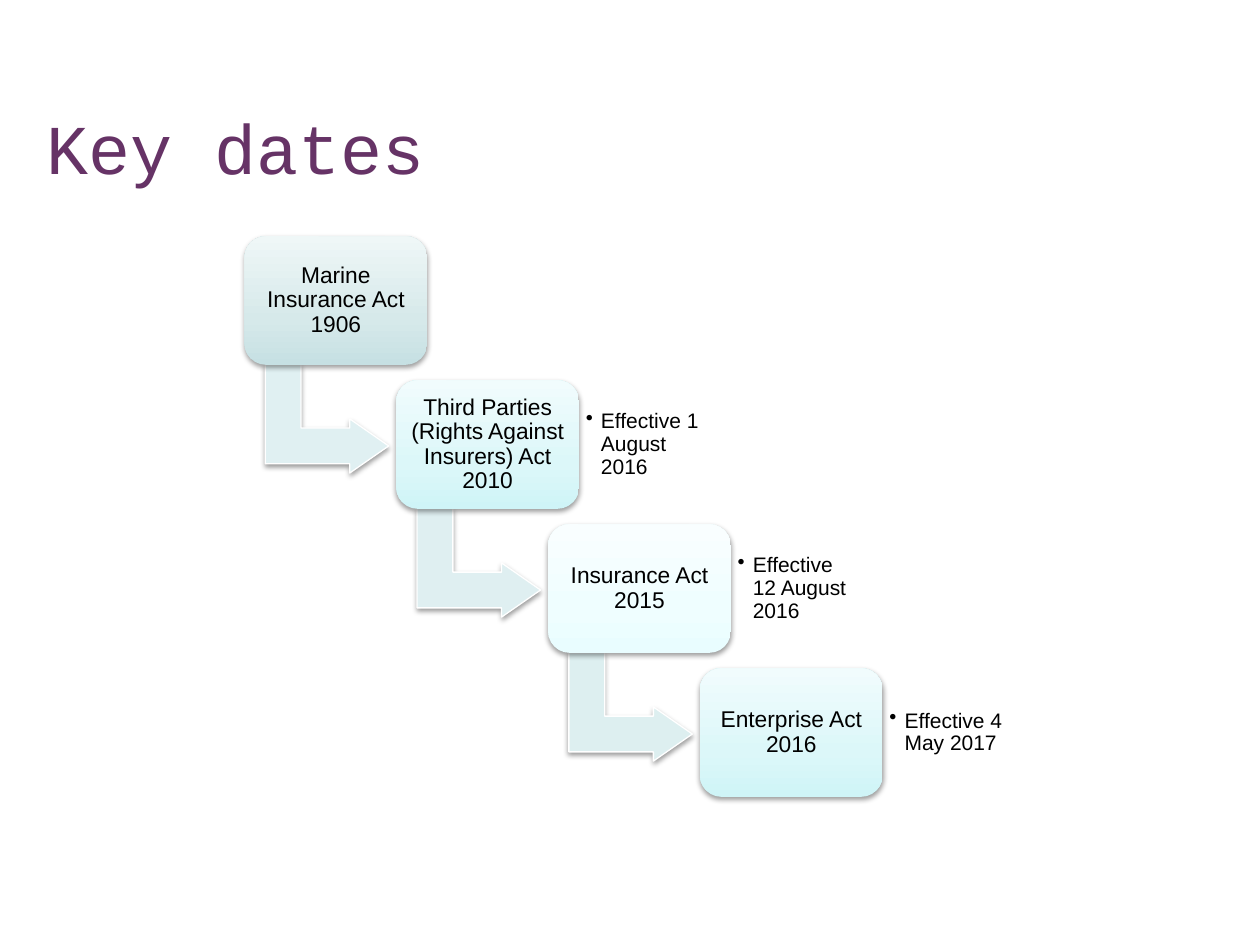
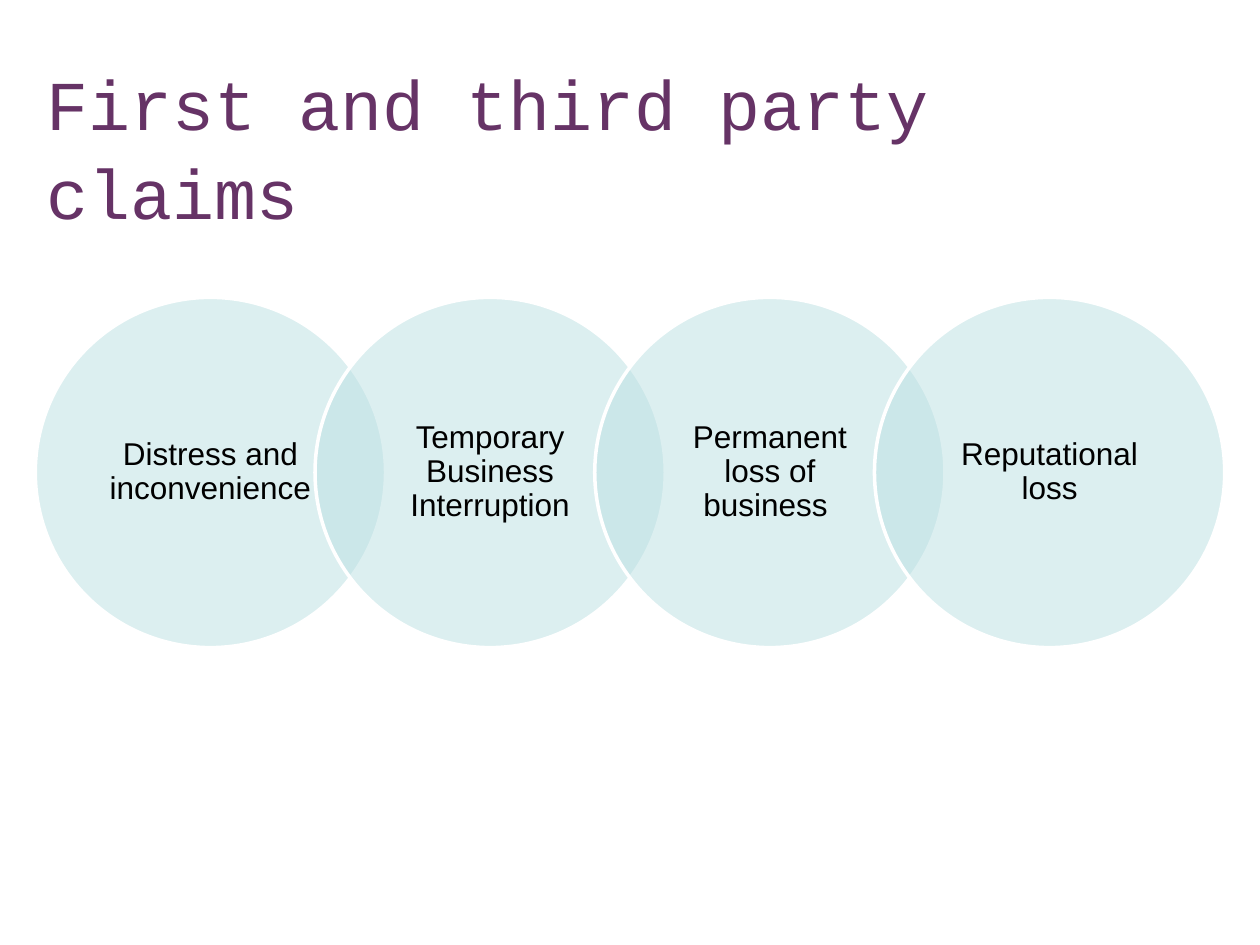
from lxml import etree
from pptx import Presentation
from pptx import util as u
from pptx.dml.color import RGBColor
from pptx.enum import shapes, text
from pptx.oxml.ns import qn

COLORS = {
    "title": "663366",
    "text": "000000",
    "line": "FFFFFF",
    "circle": "BBE0E3",
    "shadow": "000000",
}
GRADIENTS = {
    "grey": ("C6E0E3", "D6E9EA", "EFF7F7"),
    "aqua": ("CFF4F7", "DCF7F9", "F1FCFD"),
    "pale": ("E9FDFF", "EFFEFF", "F9FEFF"),
}
STOPS = (0, 35, 100)
COLS, ROWS = 100, 75
KIND = shapes.MSO_SHAPE

ACTS = [
    ("Marine Insurance Act 1906", "grey", None, "E0F0F2"),
    ("Third Parties (Rights Against Insurers) Act 2010", "aqua", "Effective 1 August 2016", "DFEFF1"),
    ("Insurance Act 2015", "pale", "Effective 12 August 2016", "DDEFF0"),
    ("Enterprise Act 2016", "aqua", "Effective 4 May 2017", None),
]
CLAIMS = [
    "Distress and inconvenience",
    "Temporary Business Interruption",
    "Permanent loss of business ",
    "Reputational loss",
]


def add_color(parent, value, alpha=None):
    clr = etree.SubElement(parent, qn("a:srgbClr"), val=value)
    if alpha is not None:
        etree.SubElement(clr, qn("a:alpha"), val=str(alpha * 1000))


class Deck:
    def __init__(self):
        self.prs = Presentation()
        self.prs.slide_width, self.prs.slide_height = u.Inches(10), u.Inches(7.5)
        self.slide = None

    def place(self, col, row, cols, rows):
        cw, rh = self.prs.slide_width / COLS, self.prs.slide_height / ROWS
        return [int(v) for v in (col * cw, row * rh, cols * cw, rows * rh)]

    def new_slide(self, title):
        self.slide = self.prs.slides.add_slide(self.prs.slide_layouts[5])
        sp = self.slide.shapes.title
        sp.left, sp.top, sp.width, sp.height = self.place(2.7, 5.2, 94.5, 12.5)
        p = self.label(sp, title, 40, "Courier New", "title", (0.1, 0.05))
        p.alignment = text.PP_ALIGN.LEFT
        p.line_spacing = 1.06

    def label(self, sp, words, size, font="Arial", color="text", inset=(0.05, 0.05)):
        tf = sp.text_frame
        tf.word_wrap = True
        tf.auto_size = text.MSO_AUTO_SIZE.NONE
        tf.vertical_anchor = text.MSO_ANCHOR.MIDDLE
        tf.margin_left = tf.margin_right = u.Inches(inset[0])
        tf.margin_top = tf.margin_bottom = u.Inches(inset[1])
        p = tf.paragraphs[0]
        p.alignment = text.PP_ALIGN.CENTER
        p.line_spacing = 0.9
        r = p.add_run()
        r.text = words
        r.font.size, r.font.name = u.Pt(size), font
        r.font.color.rgb = RGBColor.from_string(COLORS[color])
        return p

    def shape(self, kind, at, fill=None, line=None):
        sp = self.slide.shapes.add_shape(kind, *self.place(*at))
        sp.shadow.inherit = False
        if fill:
            sp.fill.solid()
            sp.fill.fore_color.rgb = RGBColor.from_string(fill)
        if line:
            sp.line.color.rgb = RGBColor.from_string(COLORS["line"])
            sp.line.width = u.Pt(line)
        else:
            sp.line.fill.background()
        return sp

    def shadow(self, sp):
        effects = sp._element.spPr.find(qn("a:effectLst"))
        outer = etree.SubElement(effects, qn("a:outerShdw"), blurRad=str(u.Pt(3.1)),
                                 dist=str(u.Pt(1.6)), dir="5400000", rotWithShape="0")
        add_color(outer, COLORS["shadow"], 38)

    def act_box(self, at, words, gradient):
        sp = self.shape(KIND.ROUNDED_RECTANGLE, at)
        sp.fill.gradient()
        grad = sp._element.spPr.find(qn("a:gradFill"))
        for child in list(grad):
            grad.remove(child)
        stops = etree.SubElement(grad, qn("a:gsLst"))
        for pos, value in zip(STOPS, GRADIENTS[gradient]):
            add_color(etree.SubElement(stops, qn("a:gs"), pos=str(pos * 1000)), value)
        etree.SubElement(grad, qn("a:lin"), ang="16200000", scaled="0")
        self.shadow(sp)
        self.label(sp, words, 13)

    def arrow(self, at, fill):
        sp = self.shape(KIND.BENT_UP_ARROW, at, fill, 0.75)
        sp.rotation = 90
        for i, value in enumerate((0.33, 0.25, 0.36)):
            sp.adjustments[i] = value
        self.shadow(sp)

    def bullet(self, at, words):
        sp = self.slide.shapes.add_textbox(*self.place(*at))
        p = self.label(sp, words, 12)
        p.alignment = text.PP_ALIGN.LEFT
        pPr = p._p.get_or_add_pPr()
        pPr.set("marL", str(u.Inches(0.12)))
        pPr.set("indent", str(u.Inches(-0.12)))
        etree.SubElement(pPr, qn("a:buChar"), char="•")

    def circle(self, at, words):
        sp = self.shape(KIND.OVAL, at, COLORS["circle"], 2)
        clr = sp._element.spPr.find(qn("a:solidFill")).find(qn("a:srgbClr"))
        etree.SubElement(clr, qn("a:alpha"), val="50000")
        self.label(sp, words, 18, inset=(0.15, 0.03))


def key_dates(deck):
    deck.new_slide("Key dates")
    for i, (act, gradient, date, arrow_fill) in enumerate(ACTS):
        col, row = 19.4 + i * 12.05, 18.75 + i * 11.43
        if arrow_fill:
            deck.arrow((col + 2.25, row + 9.6, 8.6, 9.8), arrow_fill)
        deck.act_box((col, row, 14.5, 10.2), act, gradient)
        if date:
            deck.bullet((col + 14.55, row + 1, 10.6, 8.2), date)


def claims(deck):
    deck.new_slide("First and third party claims")
    for i, claim in enumerate(CLAIMS):
        deck.circle((2.8 + i * 22.2, 23.6, 27.8, 27.8), claim)


def main():
    deck = Deck()
    key_dates(deck)
    claims(deck)
    deck.prs.save("out.pptx")


if __name__ == "__main__":
    main()
